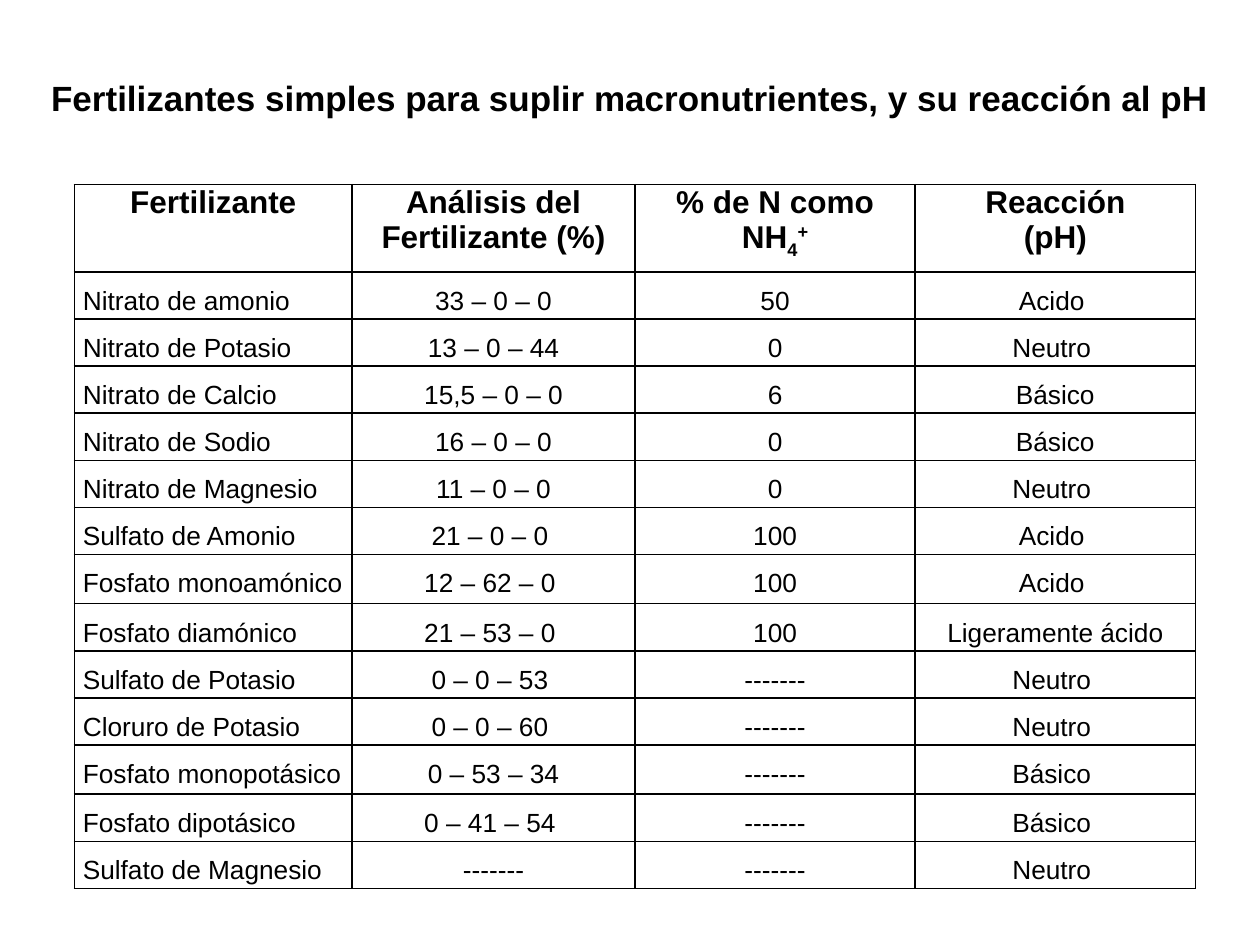
from lxml import etree
from pptx import Presentation
from pptx.dml.color import RGBColor
from pptx.enum.text import PP_ALIGN
from pptx.oxml.ns import qn
from pptx.util import Cm, Pt

LEFT, CENTER = PP_ALIGN.LEFT, PP_ALIGN.CENTER
COLORS = {"ink": "000000", "paper": "FFFFFF"}
FONT = "Arial"
BASELINES = {"_": "-25000", "^": "30000"}

TITLE = "Fertilizantes simples para suplir macronutrientes, y su reacción al pH"
HEADERS = [
    ["Fertilizante"],
    ["Análisis del", "Fertilizante (%)"],
    ["% de N como", "NH_4^+"],
    ["Reacción", "(pH)"],
]
NONE = "-------"
FERTILIZERS = [
    ("Nitrato de amonio", "33 – 0 – 0", "50", "Acido "),
    ("Nitrato de Potasio", "13 – 0 – 44", "0", "Neutro "),
    ("Nitrato de Calcio", "15,5 – 0 – 0", "6", "Básico"),
    ("Nitrato de Sodio", "16 – 0 – 0", "0", "Básico"),
    ("Nitrato de Magnesio", "11 – 0 – 0", "0", "Neutro "),
    ("Sulfato de Amonio", "21 – 0 – 0 ", "100", "Acido "),
    ("Fosfato monoamónico", "12 – 62 – 0 ", "100", "Acido "),
    ("Fosfato diamónico", "21 – 53 – 0 ", "100", "Ligeramente ácido"),
    ("Sulfato de Potasio", "0 – 0 – 53 ", NONE, "Neutro "),
    ("Cloruro de Potasio", "0 – 0 – 60 ", NONE, "Neutro "),
    ("Fosfato monopotásico", "0 – 53 – 34", NONE, "Básico "),
    ("Fosfato dipotásico", "0 – 41 – 54 ", NONE, "Básico "),
    ("Sulfato de Magnesio", NONE, NONE, "Neutro "),
]
TALL_ROWS = {"Fosfato monoamónico", "Fosfato monopotásico"}
COLUMN_WIDTHS = [5.6, 5.7, 5.65, 5.65]


class SlideBuilder:
    def __init__(self, slide):
        self.slide = slide
        background = slide.background.fill
        background.solid()
        background.fore_color.rgb = RGBColor.from_string(COLORS["paper"])

    def add_lines(self, frame, lines, size, bold=False, align=CENTER, spacing=None):
        for index, line in enumerate(lines):
            para = frame.add_paragraph() if index else frame.paragraphs[0]
            para.alignment = align
            para.line_spacing = spacing
            para.font.name = FONT
            para.font.size = Pt(size)
            para.font.bold = bold
            para.font.color.rgb = RGBColor.from_string(COLORS["ink"])
            self.add_spans(para, line)

    def add_spans(self, para, line):
        marked = line.replace("_", "|_").replace("^", "|^")
        for piece in marked.split("|"):
            span = para.add_run()
            span.text = piece.lstrip("_^")
            if piece[0] in BASELINES:
                span._r.get_or_add_rPr().set("baseline", BASELINES[piece[0]])

    def title(self, text, left, top, width, height):
        box = self.slide.shapes.add_textbox(Cm(left), Cm(top), Cm(width), Cm(height))
        box.text_frame.word_wrap = False
        self.add_lines(box.text_frame, [text], 20, bold=True)

    def cell(self, cell, lines, **style):
        cell.margin_left = cell.margin_right = Cm(0.17)
        cell.margin_top = cell.margin_bottom = 0
        properties = cell._tc.get_or_add_tcPr()
        for side in ("a:lnL", "a:lnR", "a:lnT", "a:lnB"):
            line = etree.SubElement(properties, qn(side), w=str(Pt(1)))
            fill = etree.SubElement(line, qn("a:solidFill"))
            etree.SubElement(fill, qn("a:srgbClr"), val=COLORS["ink"])
        cell.fill.background()
        self.add_lines(cell.text_frame, lines, **style)

    def table(self, left, top, widths, heights, headers, rows):
        table = self.slide.shapes.add_table(
            len(heights), len(widths), Cm(left), Cm(top), Cm(sum(widths)), Cm(sum(heights))
        ).table
        table.first_row = table.horz_banding = False
        for column, width in zip(table.columns, widths):
            column.width = Cm(width)
        for row, height in zip(table.rows, heights):
            row.height = Cm(height)
        for column, lines in enumerate(headers):
            self.cell(table.cell(0, column), lines, size=18, bold=True)
        for row, values in enumerate(rows, start=1):
            for column, value in enumerate(values):
                align = CENTER if column else LEFT
                self.cell(table.cell(row, column), [value], size=15, align=align, spacing=1.5)


def main():
    deck = Presentation()
    deck.slide_width, deck.slide_height = Cm(25.4), Cm(19.05)
    page = SlideBuilder(deck.slides.add_slide(deck.slide_layouts[6]))
    heights = [1.76] + [0.99 if row[0] in TALL_ROWS else 0.95 for row in FERTILIZERS]
    page.table(1.5, 3.72, COLUMN_WIDTHS, heights, HEADERS, FERTILIZERS)
    page.title(TITLE, 0.7, 1.42, 24, 1.12)
    deck.save("out.pptx")


if __name__ == "__main__":
    main()
